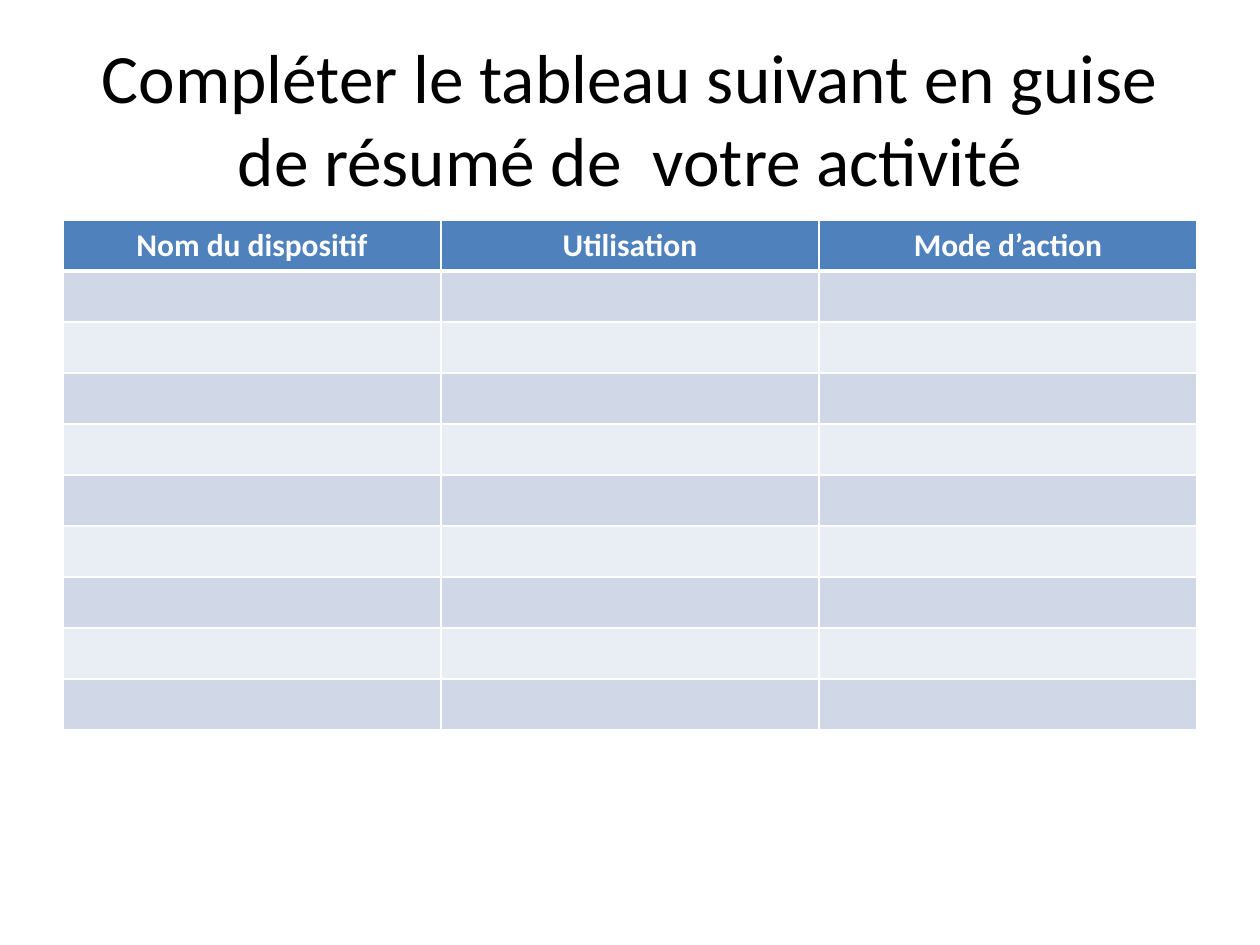
"""Build a slide with a title and a summary table to fill in."""
from dataclasses import dataclass

from lxml import etree
from pptx import Presentation
from pptx import util as u
from pptx.dml.color import RGBColor
from pptx.enum import text
from pptx.oxml.ns import qn


@dataclass(frozen=True)
class Theme:
    font: str = "Calibri"
    title_size: float = 39.6
    header_size: int = 18
    title: str = "000000"
    header_text: str = "FFFFFF"
    header: str = "4F81BD"
    bands: tuple = ("D0D8E8", "E9EDF4")
    border: str = "FFFFFF"


theme = Theme()
SCALE = 914400 / 126
HEADERS = ["Nom du dispositif", "Utilisation", "Mode d’action"]
BLANK_ROWS = 9
LEFT, WIDTH = 63, 1134
COL_W, ROW_H = WIDTH // len(HEADERS), 51


def px(n):
    return u.Emu(round(n * SCALE))


def style(p, size, color, bold=False):
    p.alignment = text.PP_ALIGN.CENTER
    p.font.name = theme.font
    p.font.size = u.Pt(size)
    p.font.bold = bold
    p.font.color.rgb = RGBColor.from_string(color)


prs = Presentation()
prs.slide_width, prs.slide_height = px(1260), px(945)
s = prs.slides.add_slide(prs.slide_layouts[6])

tf = s.shapes.add_textbox(px(LEFT), px(38), px(WIDTH), px(158)).text_frame
tf.word_wrap = True
tf.vertical_anchor = text.MSO_ANCHOR.MIDDLE
p = tf.paragraphs[0]
p.text = "Compléter le tableau suivant en guise de résumé de  votre activité"
style(p, theme.title_size, theme.title)

rows = BLANK_ROWS + 1
table = s.shapes.add_table(rows, len(HEADERS), px(LEFT), px(220),
                           px(WIDTH), px(ROW_H * rows)).table
for col in table.columns:
    col.width = px(COL_W)

for i, row in enumerate(table.rows):
    row.height = px(ROW_H)
    for j, cell in enumerate(row.cells):
        tcPr = cell._tc.get_or_add_tcPr()
        for side in ("L", "R", "T", "B"):
            thick = (i == 0 and side == "B") or (i == 1 and side == "T")
            ln = etree.SubElement(tcPr, qn(f"a:ln{side}"), w=str(u.Pt(3 if thick else 1)))
            fill = etree.SubElement(ln, qn("a:solidFill"))
            etree.SubElement(fill, qn("a:srgbClr"), val=theme.border)
        cell.fill.solid()
        color = theme.header if i == 0 else theme.bands[(i - 1) % 2]
        cell.fill.fore_color.rgb = RGBColor.from_string(color)
        if i == 0:
            p = cell.text_frame.paragraphs[0]
            p.text = HEADERS[j]
            style(p, theme.header_size, theme.header_text, bold=True)

prs.save("out.pptx")
